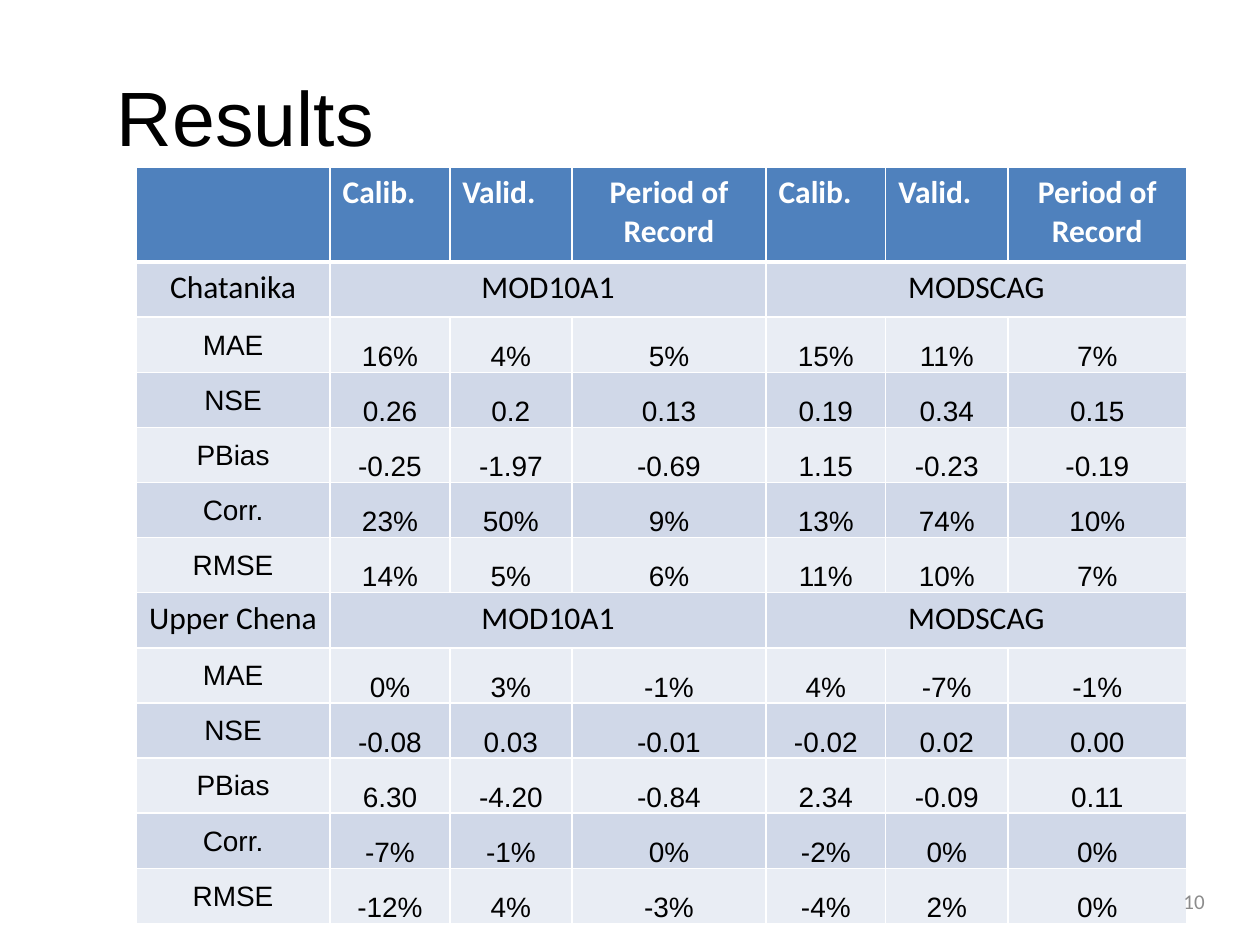
"""Build the Results slide comparing calibration statistics for two basins."""
from lxml import etree
from pptx import Presentation, util as u
from pptx.dml.color import RGBColor
from pptx.enum import text
from pptx.oxml.ns import qn

COLORS = {"head": "4F81BD", "dark": "D0D8E8", "light": "E9EDF4",
          "white": "FFFFFF", "black": "000000", "gray": "8C8C8C"}
HEADER = ["", "Calib.", "Valid.", "Period of Record", "Calib.", "Valid.", "Period of Record"]
PRODUCTS = ["MOD10A1", "MODSCAG"]
BASINS = {
    "Chatanika": [
        ["MAE", "16%", "4%", "5%", "15%", "11%", "7%"],
        ["NSE", "0.26", "0.2", "0.13", "0.19", "0.34", "0.15"],
        ["PBias", "-0.25", "-1.97", "-0.69", "1.15", "-0.23", "-0.19"],
        ["Corr.", "23%", "50%", "9%", "13%", "74%", "10%"],
        ["RMSE", "14%", "5%", "6%", "11%", "10%", "7%"],
    ],
    "Upper Chena": [
        ["MAE", "0%", "3%", "-1%", "4%", "-7%", "-1%"],
        ["NSE", "-0.08", "0.03", "-0.01", "-0.02", "0.02", "0.00"],
        ["PBias", "6.30", "-4.20", "-0.84", "2.34", "-0.09", "0.11"],
        ["Corr.", "-7%", "-1%", "0%", "-2%", "0%", "0%"],
        ["RMSE", "-12%", "4%", "-3%", "-4%", "2%", "0%"],
    ],
}
COL_WIDTHS = [1.54, 0.95, 0.97, 1.54, 0.95, 0.97, 1.42]
HEADER_HEIGHT, TABLE_HEIGHT = 0.75, 6
LABEL = {"name": "Calibri", "size": u.Pt(18), "bold": False}
HEAD = {**LABEL, "bold": True}
VALUE = {"name": "Arial", "size": u.Pt(16), "bold": False}
TITLE = {"name": "Arial", "size": u.Pt(44)}
NUMBER = {"name": "Calibri", "size": u.Pt(12)}
TIGHT = {"margin_left": u.Inches(0.01), "margin_right": u.Inches(0.01),
         "margin_top": u.Inches(0.01), "margin_bottom": 0}
LEFT, CENTER, RIGHT = text.PP_ALIGN.LEFT, text.PP_ALIGN.CENTER, text.PP_ALIGN.RIGHT
TOP, MIDDLE, BOTTOM = text.MSO_ANCHOR.TOP, text.MSO_ANCHOR.MIDDLE, text.MSO_ANCHOR.BOTTOM


def write(p, words, font, color, align):
    p.alignment = align
    r = p.add_run()
    r.text = words
    for key, value in font.items():
        setattr(r.font, key, value)
    r.font.color.rgb = RGBColor.from_string(COLORS[color])


def add_text(s, box, words, font, color, align):
    tf = s.shapes.add_textbox(*map(u.Inches, box)).text_frame
    tf.word_wrap = True
    tf.vertical_anchor = MIDDLE
    write(tf.paragraphs[0], words, font, color, align)


def style_cell(cell, fill, top=1, bottom=1):
    tc_pr = cell._tc.get_or_add_tcPr()
    for side, width in (("L", 1), ("R", 1), ("T", top), ("B", bottom)):
        ln = etree.SubElement(tc_pr, qn(f"a:ln{side}"), w=str(u.Pt(width)))
        solid = etree.SubElement(ln, qn("a:solidFill"))
        etree.SubElement(solid, qn("a:srgbClr"), val=COLORS["white"])
    cell.fill.solid()
    cell.fill.fore_color.rgb = RGBColor.from_string(COLORS[fill])


def fill_cell(cell, words, font, color="black", align=CENTER, anchor=TOP, margins=None):
    cell.vertical_anchor = anchor
    for key, value in (margins or {}).items():
        setattr(cell, key, value)
    if words:
        write(cell.text_frame.paragraphs[0], words, font, color, align)


def add_results(s):
    n_rows = 1 + sum(1 + len(stats) for stats in BASINS.values())
    table = s.shapes.add_table(n_rows, len(HEADER), u.Inches(1.08), u.Inches(1.33),
                               u.Inches(sum(COL_WIDTHS)), u.Inches(TABLE_HEIGHT)).table
    for col, width in zip(table.columns, COL_WIDTHS):
        col.width = u.Inches(width)
    for i, row in enumerate(table.rows):
        height = (TABLE_HEIGHT - HEADER_HEIGHT) / (n_rows - 1) if i else HEADER_HEIGHT
        row.height = u.Inches(height)
        fill = ("light", "dark")[i % 2] if i else "head"
        for cell in row.cells:
            style_cell(cell, fill, top=3 if i == 1 else 1, bottom=1 if i else 3)

    for j, words in enumerate(HEADER):
        fill_cell(table.cell(0, j), words, HEAD, "white", LEFT if j % 3 else CENTER)
    i = 1
    for basin, stats in BASINS.items():
        fill_cell(table.cell(i, 0), basin, LABEL)
        for k, product in enumerate(PRODUCTS):
            first = table.cell(i, 1 + 3 * k)
            first.merge(table.cell(i, 3 + 3 * k))
            fill_cell(first, product, LABEL)
        for i, values in enumerate(stats, i + 1):
            for j, words in enumerate(values):
                fill_cell(table.cell(i, j), words, VALUE,
                          anchor=BOTTOM if j else MIDDLE, margins=TIGHT)
        i += 1


def main():
    prs = Presentation()
    prs.slide_width, prs.slide_height = u.Inches(10), u.Inches(7.5)
    s = prs.slides.add_slide(prs.slide_layouts[6])
    add_text(s, (0.83, 0.29, 8.83, 1.25), "Results", TITLE, "black", LEFT)
    add_results(s)
    add_text(s, (7.33, 6.95, 2.33, 0.4), "10", NUMBER, "gray", RIGHT)
    prs.save("out.pptx")


if __name__ == "__main__":
    main()
